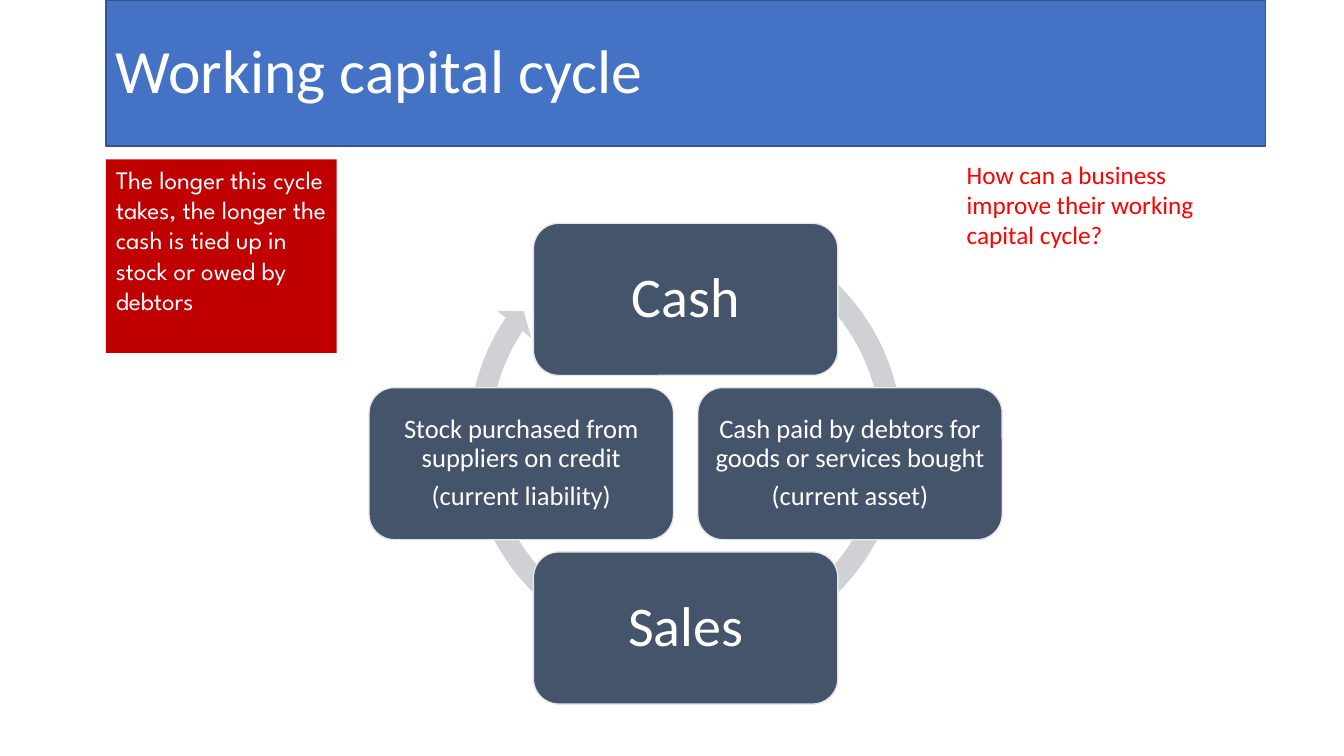
from dataclasses import dataclass

from pptx import Presentation
from pptx.dml.color import RGBColor
from pptx.enum.shapes import MSO_SHAPE
from pptx.enum.text import MSO_ANCHOR, MSO_AUTO_SIZE, PP_ALIGN
from pptx.util import Inches, Pt

RECTANGLE = MSO_SHAPE.RECTANGLE
ROUNDED = MSO_SHAPE.ROUNDED_RECTANGLE
CIRCULAR_ARROW = MSO_SHAPE.CIRCULAR_ARROW
TOP, MIDDLE = MSO_ANCHOR.TOP, MSO_ANCHOR.MIDDLE
LEFT, CENTER = PP_ALIGN.LEFT, PP_ALIGN.CENTER
TITLE_ONLY = 5


@dataclass(frozen=True)
class Theme:
    font: str = "Calibri"
    note_font: str = "League Spartan"
    white: str = "FFFFFF"
    banner: str = "4472C4"
    banner_line: str = "325491"
    stage: str = "44546A"
    stage_line: str = "E7E6E6"
    ring: str = "CFD1D4"
    note: str = "C00000"
    question: str = "FF0000"
    title_size: int = 44
    stage_size: int = 40
    detail_size: int = 19
    note_size: int = 18


THEME = Theme()

CYCLE_CENTER = (6.8, 4.6)
STAGE_SIZE = (3.02, 1.51)
STAGE_OFFSET = 1.63
RING_SIZE = 4.52

# Column and row steps from the cycle's center, text size, inset, lines
STAGES = [
    (0, -1, THEME.stage_size, 0.17, ["Cash"]),
    (1, 0, THEME.detail_size, 0.08,
     ["Cash paid by debtors for goods or services bought", "(current asset)"]),
    (0, 1, THEME.stage_size, 0.17, ["Sales"]),
    (-1, 0, THEME.detail_size, 0.08,
     ["Stock purchased from suppliers on credit", "(current liability)"]),
]


def paint(shape, fill, line=None):
    shape.shadow.inherit = False
    shape.fill.solid()
    shape.fill.fore_color.rgb = RGBColor.from_string(fill)
    if line:
        shape.line.color.rgb = RGBColor.from_string(line)
        shape.line.width = Pt(1)
    else:
        shape.line.fill.background()


def write(shape, lines, size, color=THEME.white, font=THEME.font,
          align=LEFT, anchor=TOP, spacing=1.0, gap=0):
    """Fill a shape with paragraphs; gap is the space after, in points."""
    frame = shape.text_frame
    frame.word_wrap = True
    frame.auto_size = MSO_AUTO_SIZE.NONE
    frame.vertical_anchor = anchor
    frame.text = "\n".join(lines)
    for paragraph in frame.paragraphs:
        paragraph.alignment = align
        paragraph.line_spacing = spacing
        paragraph.space_after = Pt(gap)
        paragraph.font.name = font
        paragraph.font.size = Pt(size)
        paragraph.font.color.rgb = RGBColor.from_string(color)


def add_title(slide):
    title = slide.shapes.title
    title.left, title.top = Inches(1.05), Inches(0)
    title.width, title.height = Inches(11.5), Inches(1.45)
    paint(title, THEME.banner, THEME.banner_line)
    write(title, ["Working capital cycle"], THEME.title_size,
          anchor=MIDDLE, spacing=0.9)


def add_centered(slide, kind, center, size):
    (x, y), (width, height) = center, size
    return slide.shapes.add_shape(
        kind, Inches(x - width / 2), Inches(y - height / 2),
        Inches(width), Inches(height))


def add_ring(slide):
    center = (CYCLE_CENTER[0], 4.35)
    ring = add_centered(slide, CIRCULAR_ARROW, center, (RING_SIZE, RING_SIZE))
    thickness, head_width = 4.7 / 100, 4.8 / 100
    # Head, end and start angles: 60000 units per degree, scaled by 100000
    angles = [degrees * 0.6 for degrees in (4.55, 213.63, 300.67)]
    for index, value in enumerate([thickness, *angles, head_width]):
        ring.adjustments[index] = value
    paint(ring, THEME.ring)


def add_stage(slide, column, row, size, inset, lines):
    center = (CYCLE_CENTER[0] + column * STAGE_OFFSET,
              CYCLE_CENTER[1] + row * STAGE_OFFSET)
    stage = add_centered(slide, ROUNDED, center, STAGE_SIZE)
    paint(stage, THEME.stage, THEME.stage_line)
    write(stage, lines, size, align=CENTER, anchor=MIDDLE,
          spacing=0.9, gap=size * 0.35)
    frame = stage.text_frame
    frame.margin_left = frame.margin_right = Inches(inset)
    frame.margin_top = frame.margin_bottom = Inches(inset)


def add_note(slide):
    note = slide.shapes.add_shape(
        RECTANGLE, Inches(1.05), Inches(1.58), Inches(2.29), Inches(1.92))
    paint(note, THEME.note)
    write(note, ["The longer this cycle takes, the longer the cash is tied up "
                 "in stock or owed by debtors"],
          THEME.note_size, font=THEME.note_font)


def add_question(slide):
    question = slide.shapes.add_textbox(
        Inches(9.49), Inches(1.53), Inches(3.06), Inches(1.01))
    write(question, ["How can a business improve their working capital cycle?"],
          THEME.note_size, THEME.question)


def main():
    deck = Presentation()
    deck.slide_width, deck.slide_height = Inches(13.33), Inches(7.5)
    slide = deck.slides.add_slide(deck.slide_layouts[TITLE_ONLY])
    add_title(slide)
    add_ring(slide)
    for stage in STAGES:
        add_stage(slide, *stage)
    add_note(slide)
    add_question(slide)
    deck.save("out.pptx")


if __name__ == "__main__":
    main()
